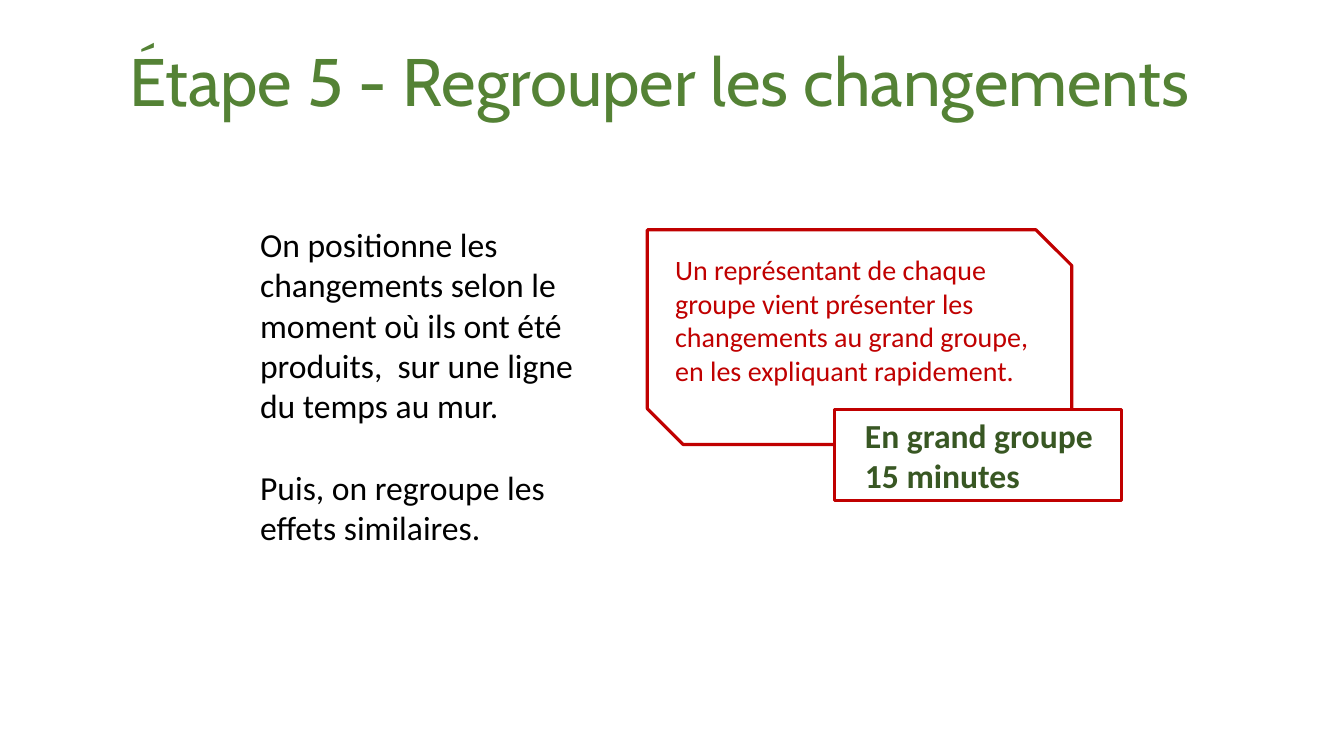
from pptx import Presentation
from pptx.dml.color import RGBColor
from pptx.enum.shapes import MSO_SHAPE as Shape
from pptx.enum.text import MSO_ANCHOR as Anchor, MSO_AUTO_SIZE as AutoSize, PP_ALIGN as Align
from pptx.util import Inches, Pt

TITLE_GREEN = RGBColor(0x54, 0x82, 0x35)
LABEL_GREEN = RGBColor(0x38, 0x57, 0x23)
RED = RGBColor(0xC0, 0x00, 0x00)
BLACK = RGBColor(0x00, 0x00, 0x00)
WHITE = RGBColor(0xFF, 0xFF, 0xFF)


def place(box, left, top, width, height):
    box.left, box.top = Inches(left), Inches(top)
    box.width, box.height = Inches(width), Inches(height)


def write(box, texts, anchor, para_format, font_format, color, indent=0):
    frame = box.text_frame
    frame.word_wrap = True
    frame.auto_size = AutoSize.NONE
    frame.vertical_anchor = anchor
    frame.text = "\n".join(texts)
    for para in frame.paragraphs:
        properties = para._p.get_or_add_pPr()
        properties.set("marL", str(Inches(indent)))
        properties.set("indent", "0")
        for name, value in para_format.items():
            setattr(para, name, value)
        for span in para.runs:
            for name, value in font_format.items():
                setattr(span.font, name, value)
            span.font.color.rgb = color


deck = Presentation()
deck.slide_width, deck.slide_height = Inches(13.33), Inches(7.5)
page = deck.slides.add_slide(deck.slide_layouts[1])

title = page.shapes.title
place(title, 0.33, 0.34, 12.42, 0.91)
write(title, ["Étape 5 - Regrouper les changements"], Anchor.BOTTOM,
      {"alignment": Align.CENTER, "line_spacing": 0.9},
      {"name": "Cabin", "size": Pt(48)}, TITLE_GREEN)

left_aligned = {"alignment": Align.LEFT, "space_before": Pt(0)}
instructions = page.placeholders[1]
place(instructions, 2.48, 2.17, 3.66, 3.33)
write(instructions,
      ["On positionne les changements selon le moment où ils ont été produits,  "
       "sur une ligne du temps au mur.",
       "Puis, on regroupe les effets similaires."],
      Anchor.TOP, left_aligned, {"name": "Calibri", "size": Pt(24)}, BLACK)
bullet_free = [para._p.get_or_add_pPr() for para in instructions.text_frame.paragraphs]
for properties in bullet_free:
    properties.append(properties.makeelement(
        "{http://schemas.openxmlformats.org/drawingml/2006/main}buNone", {}))
instructions.text_frame.paragraphs[1].space_before = Pt(29.3)

callouts = [
    (Shape.SNIP_2_DIAG_RECTANGLE, (6.42, 2.28, 4.21, 2.13), None,
     "Un représentant de chaque groupe vient présenter les changements au grand groupe, "
     "en les expliquant rapidement.", Anchor.TOP, {"size": Pt(20)}, RED, 0),
    (Shape.RECTANGLE, (8.28, 4.06, 2.84, 0.91), WHITE,
     "En grand groupe\v15 minutes", Anchor.MIDDLE,
     {"size": Pt(24), "bold": True}, LABEL_GREEN, 0.2),
]
for kind, bounds, fill, text, anchor, font_format, color, indent in callouts:
    callout = page.shapes.add_shape(kind, *map(Inches, bounds))
    callout.shadow.inherit = False
    if fill is None:
        callout.fill.background()
    else:
        callout.fill.solid()
        callout.fill.fore_color.rgb = fill
    callout.line.color.rgb = RED
    callout.line.width = Pt(2.25)
    write(callout, [text], anchor, left_aligned, {"name": "Calibri", **font_format}, color, indent)

deck.save("out.pptx")
